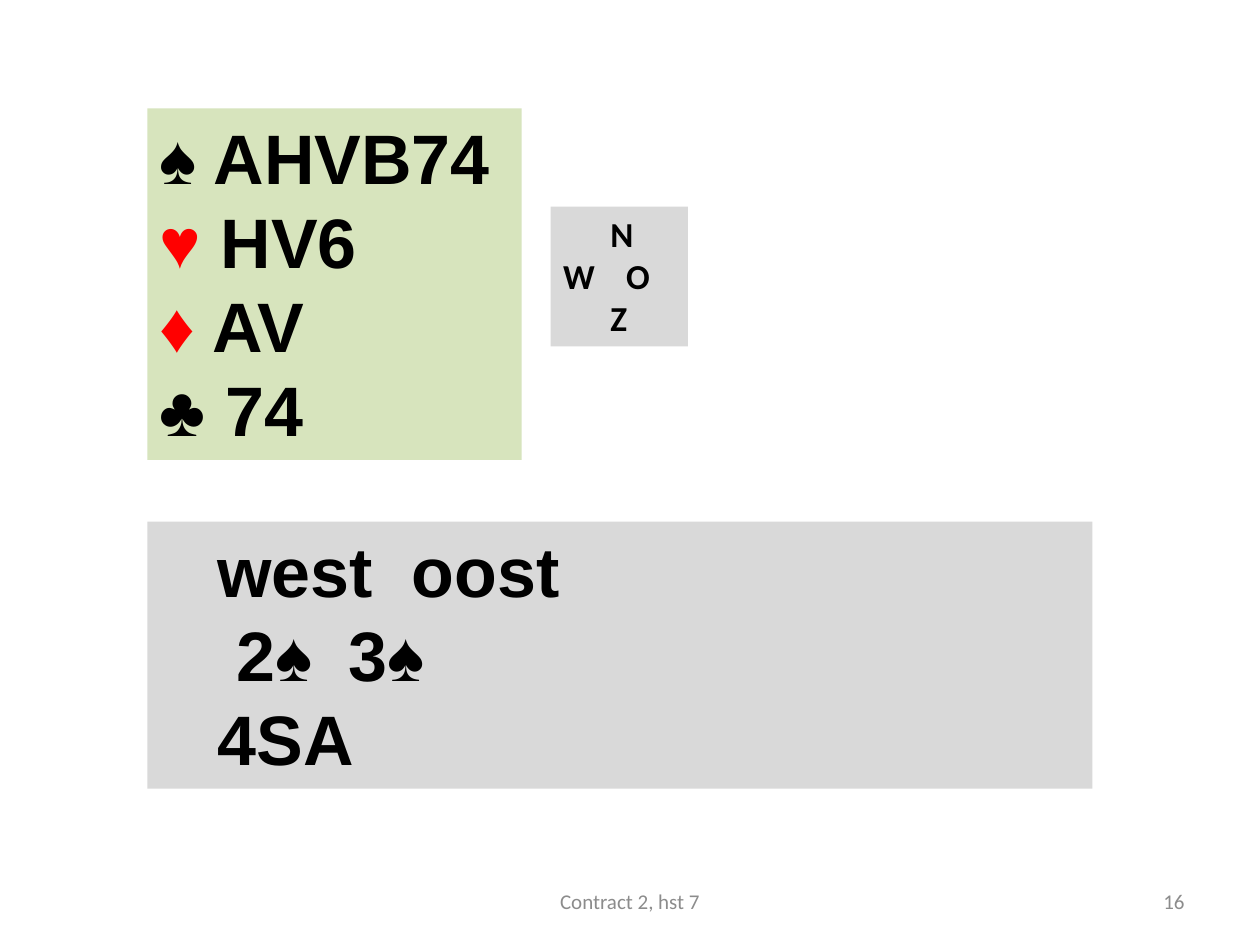
from lxml.etree import SubElement
from pptx import Presentation
from pptx.dml.color import RGBColor
from pptx.enum.shapes import MSO_SHAPE
from pptx.enum.text import MSO_ANCHOR, PP_ALIGN
from pptx.oxml.ns import qn
from pptx.util import Pt

COLORS = {"black": "000000", "red": "FF0000", "grey": "D9D9D9",
          "green": "D7E4BD", "footer": "8C8C8C"}

prs = Presentation()
prs.slide_width, prs.slide_height = Pt(720), Pt(540)
s = prs.slides.add_slide(prs.slide_layouts[6])


def add_run(p, text, font, size, color, bold=True):
    r = p.add_run()
    r.text = text
    r.font.name, r.font.size, r.font.bold = font, Pt(size), bold
    r.font.color.rgb = RGBColor.from_string(COLORS[color])


def add_panel(box, fill, font, size, lines):
    """Filled box; each line is (first-line indent, tab stop or None, runs)."""
    sp = s.shapes.add_shape(MSO_SHAPE.RECTANGLE, *map(Pt, box))
    sp.shadow.inherit = False
    sp.fill.solid()
    sp.fill.fore_color.rgb = RGBColor.from_string(COLORS[fill])
    sp.line.fill.background()
    tf = sp.text_frame
    tf.word_wrap = True
    tf.vertical_anchor = MSO_ANCHOR.TOP
    for i, (indent, stop, runs) in enumerate(lines):
        p = tf.add_paragraph() if i else tf.paragraphs[0]
        p.alignment = PP_ALIGN.LEFT
        pPr = p._p.get_or_add_pPr()
        pPr.set("marL", "0")
        pPr.set("indent", str(Pt(indent)))
        if stop:
            tabs = SubElement(pPr, qn("a:tabLst"))
            SubElement(tabs, qn("a:tab"), pos=str(Pt(stop)), algn="l")
        for text, color in runs:
            add_run(p, text, font, size, color)


# Compass
add_panel((314.64, 118.08, 78.48, 79.92), "grey", "Calibri", 20, [
    (27, None, [("N", "black")]),
    (0, 45, [("W\tO", "black")]),
    (27, None, [("Z", "black")]),
])

# Bidding
add_panel((84.24, 298.08, 540, 152.64), "grey", "Arial", 40, [
    (33, 360, [("west\toost", "black")]),
    (44, 371, [("2♠\t3♠", "black")]),
    (33, None, [("4SA", "black")]),
])

# Hand
hand = [("♠", "black", "AHVB74"), ("♥", "red", "HV6"),
        ("♦", "red", "AV"), ("♣", "black", "74")]
add_panel((84.24, 61.92, 213.84, 200.88), "green", "Arial", 40,
          [(0, None, [(suit, color), (f" {cards}", "black")])
           for suit, color, cards in hand])

# Footer
for left, width, align, text in [
        (516, 168, PP_ALIGN.RIGHT, "16"),
        (246, 228, PP_ALIGN.CENTER, "Contract 2, hst 7")]:
    tf = s.shapes.add_textbox(Pt(left), Pt(500.5), Pt(width), Pt(28.75)).text_frame
    tf.word_wrap = True
    tf.vertical_anchor = MSO_ANCHOR.MIDDLE
    p = tf.paragraphs[0]
    p.alignment = align
    add_run(p, text, "Calibri", 12, "footer", bold=False)

prs.save("out.pptx")
